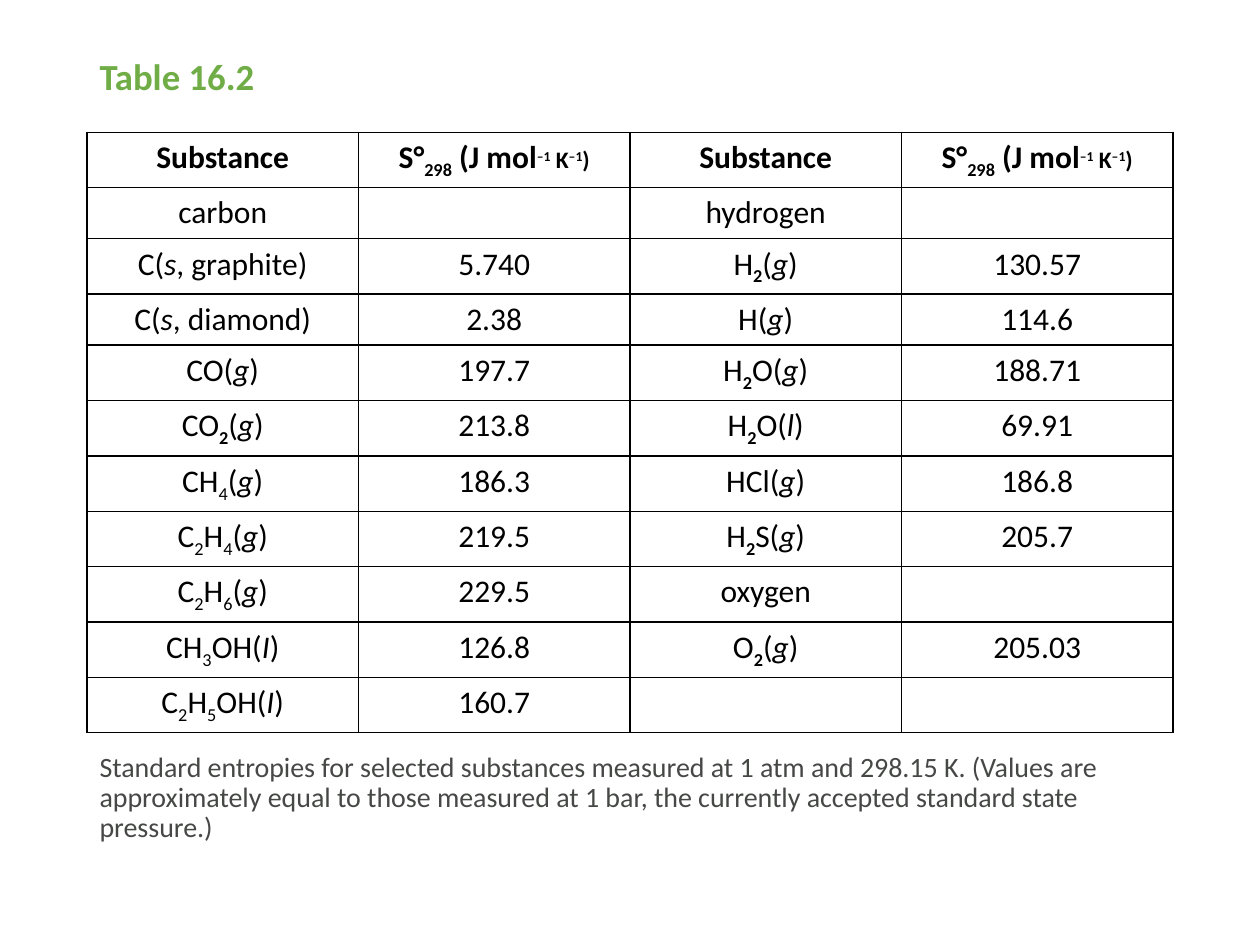
from lxml.etree import SubElement as Sub
from pptx import Presentation as Deck
from pptx.dml.color import RGBColor as Rgb
from pptx.enum.text import MSO_ANCHOR as Anchor, MSO_AUTO_SIZE as Auto, PP_ALIGN as Align
from pptx.oxml import parse_xml
from pptx.oxml.ns import nsdecls, qn
from pptx.util import Inches, Pt

INK = {"title": "70AD47", "cell": "000000", "note": "464846", "line": "000000"}
FONT = "Calibri"
LEFT, WIDTH = 0.069, 0.862

UNIT = "S°|_298| (J mol|^–1|< K|^–1|<)"
HEAD = ["Substance", UNIT, "Substance", UNIT]
ROWS = [
    ["carbon", "", "hydrogen", ""],
    ["C(|/s|, graphite)", "5.740", "H|*2|(|/g|)", "130.57"],
    ["C(|/s|, diamond)", "2.38", "H(|/g|)", "114.6"],
    ["CO(|/g|)", "197.7", "H|*2|O(|/g|)", "188.71"],
    ["CO|*2|(|/g|)", "213.8", "H|*2|O(|/l|)", "69.91"],
    ["CH|_4|(|/g|)", "186.3", "HCl(|/g|)", "186.8"],
    ["C|_2|H|_4|(|/g|)", "219.5", "H|*2|S(|/g|)", "205.7"],
    ["C|_2|H|_6|(|/g|)", "229.5", "oxygen", ""],
    ["CH|_3|OH(|/I|)", "126.8", "O|*2|(|/g|)", "205.03"],
    ["C|_2|H|_5|OH(|/I|)", "160.7", "", ""],
]
NOTE = ("Standard entropies for selected substances measured at 1 atm and 298.15 K. "
        "(Values are approximately equal to those measured at 1 bar, "
        "the currently accepted standard state pressure.)")
SHIFT = {"_": "-25000", "*": "-25000", "^": "30000"}


class Page:
    def __init__(self, deck):
        self.wide, self.high = deck.slide_width, deck.slide_height
        self.slide = deck.slides.add_slide(deck.slide_layouts[1])

    def area(self, top, height):
        return (int(LEFT * self.wide), int(top * self.high),
                int(WIDTH * self.wide), int(height * self.high))

    def style(self, font, size, ink, bold=False):
        font.name, font.size, font.bold = FONT, Pt(size), bold
        font.color.rgb = Rgb.from_string(INK[ink])

    def holder(self, slot, text, top, height, size, ink, bold=False, anchor=Anchor.TOP):
        box = self.slide.placeholders[slot]
        box.left, box.top, box.width, box.height = self.area(top, height)
        frame = box.text_frame
        frame.text = text
        frame.word_wrap, frame.auto_size = True, Auto.NONE
        frame.vertical_anchor = anchor
        para = frame.paragraphs[0]
        para.alignment, para.line_spacing, para.space_before = Align.LEFT, 0.9, Pt(0)
        props = para._p.get_or_add_pPr()
        props.set("marL", "0")
        props.set("indent", "0")
        Sub(props, qn("a:buNone"))
        self.style(para.runs[0].font, size, ink, bold)

    def border(self, cell):
        props = cell._tc.get_or_add_tcPr()
        for spot, side in enumerate("LRTB"):
            props.insert(spot, parse_xml(
                f'<a:ln{side} {nsdecls("a")} w="12700"><a:solidFill>'
                f'<a:srgbClr val="{INK["line"]}"/></a:solidFill></a:ln{side}>'))

    def fill(self, cell, text, bold):
        cell.fill.background()
        self.border(cell)
        para = cell.text_frame.paragraphs[0]
        para.alignment = Align.CENTER
        for part in text.split("|") if text else []:
            mark = part[0] if part[0] in "_*^</" else ""
            run = para.add_run()
            run.text = part[len(mark):]
            size = 13.5 if mark in ("^", "<") else 18
            self.style(run.font, size, "cell", bold or mark == "*")
            run.font.italic = mark == "/"
            if mark in SHIFT:
                run.font._element.set("baseline", SHIFT[mark])

    def table(self, rows, top, height):
        shape = self.slide.shapes.add_table(len(rows), len(rows[0]), *self.area(top, height))
        grid = shape.table
        grid.first_row = grid.horz_banding = False
        for r, row in enumerate(rows):
            for c, text in enumerate(row):
                self.fill(grid.cell(r, c), text, r == 0)


def main():
    deck = Deck()
    deck.slide_width, deck.slide_height = Inches(10), Inches(7.5)
    page = Page(deck)
    page.holder(0, "Table 16.2", 0.053, 0.061, 21, "title", True, Anchor.MIDDLE)
    page.table([HEAD] + ROWS, 0.14, 0.595)
    page.holder(1, NOTE, 0.79, 0.113, 16, "note")
    deck.save("out.pptx")


if __name__ == "__main__":
    main()
